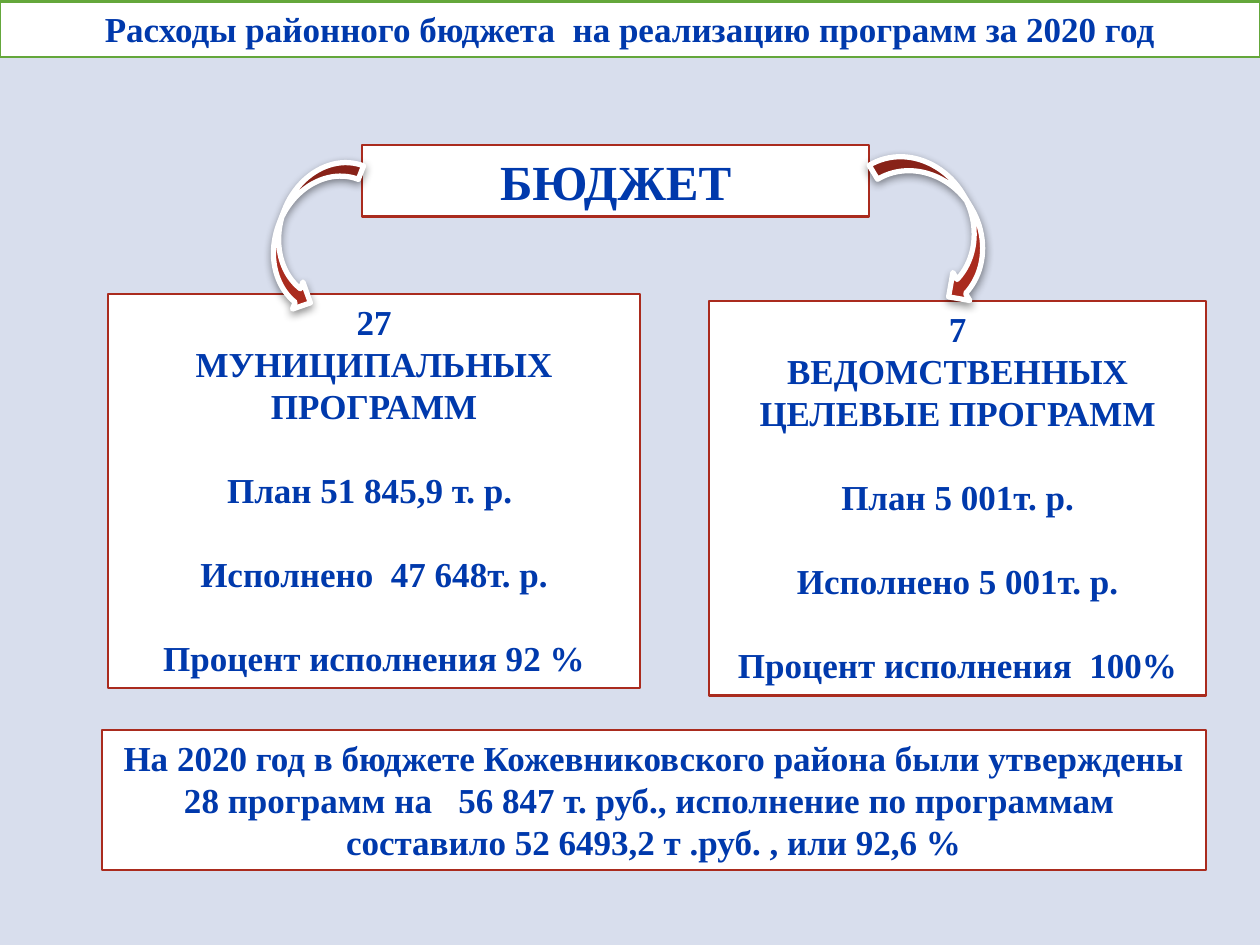
from lxml.etree import SubElement
from pptx import Presentation
from pptx.dml.color import RGBColor
from pptx.enum.shapes import MSO_SHAPE
from pptx.enum.text import MSO_ANCHOR, PP_ALIGN
from pptx.oxml.ns import qn
from pptx.util import Pt

RED, WHITE, BLUE, GREEN = "AA2B1E", "FFFFFF", "0039AC", "64A73B"


def paint(shape, fill, line, width):
    shape.fill.solid()
    shape.fill.fore_color.rgb = RGBColor.from_string(fill)
    shape.line.color.rgb = RGBColor.from_string(line)
    shape.line.width = Pt(width)


def write(shape, paragraphs, size=20, gap=0, gap_from=2):
    """Write centred paragraphs; those from gap_from on get space before."""
    frame = shape.text_frame
    frame.word_wrap = True
    frame.vertical_anchor = MSO_ANCHOR.TOP
    frame.margin_left = frame.margin_right = Pt(7.2)
    frame.margin_top = frame.margin_bottom = Pt(3.6)
    for index, text in enumerate(paragraphs):
        paragraph = frame.add_paragraph() if index else frame.paragraphs[0]
        paragraph.text = text
        paragraph.alignment = PP_ALIGN.CENTER
        paragraph.line_spacing = Pt(size * 1.2)
        paragraph.space_before = Pt(gap if index >= gap_from else 0)
        paragraph.font.name = "Times New Roman"
        paragraph.font.size = Pt(size)
        paragraph.font.bold = True
        paragraph.font.color.rgb = RGBColor.from_string(BLUE)


presentation = Presentation()
presentation.slide_width, presentation.slide_height = Pt(720), Pt(540)
slide = presentation.slides.add_slide(presentation.slide_layouts[5])
slide.background.fill.solid()
slide.background.fill.fore_color.rgb = RGBColor.from_string("D8DEED")

# Title bar
title = slide.shapes.title
title.left, title.top, title.width, title.height = Pt(0), Pt(0.9), Pt(720), Pt(31.5)
paint(title, WHITE, GREEN, 1.25)
write(title, ["Расходы районного бюджета  на реализацию программ за 2020 год"])

# Budget, the two kinds of programmes and the summary
boxes = [
    (207, 82.8, 289.5, 41, 28, ["БЮДЖЕТ"]),
    (405.2, 172, 284, 225.5, 20, [
        "7", "ВЕДОМСТВЕННЫХ ЦЕЛЕВЫЕ ПРОГРАММ", "План 5 001т. р.",
        "Исполнено 5 001т. р.", "Процент исполнения  100%"]),
    (61.8, 168, 304, 225.2, 20, [
        "27", "МУНИЦИПАЛЬНЫХ ПРОГРАММ", "План 51 845,9 т. р. ",
        "Исполнено  47 648т. р.", "Процент исполнения 92 %"]),
    (58.2, 417.3, 630.8, 79.8, 20, [
        "На 2020 год в бюджете Кожевниковского района были утверждены "
        "28 программ на   56 847 т. руб., исполнение по программам  "
        "составило 52 6493,2 т .руб. , или 92,6 %"]),
]
for left, top, width, height, size, paragraphs in boxes:
    box = slide.shapes.add_shape(
        MSO_SHAPE.RECTANGLE, Pt(left), Pt(top), Pt(width), Pt(height))
    box.shadow.inherit = False
    paint(box, WHITE, RED, 1.25)
    write(box, paragraphs, size=size, gap=24)

# Curved arrows from the budget to the programmes, with a soft shadow
arrows = [
    (MSO_SHAPE.CURVED_LEFT_ARROW, 519.1, 77.8, 37.4, 97.2, 328.9),
    (MSO_SHAPE.CURVED_RIGHT_ARROW, 159.1, 85.7, 33.1, 92.2, 21.2),
]
for kind, left, top, width, height, rotation in arrows:
    arrow = slide.shapes.add_shape(kind, Pt(left), Pt(top), Pt(width), Pt(height))
    arrow.rotation = rotation
    arrow.shadow.inherit = False
    paint(arrow, RED, WHITE, 3)
    effects = arrow.element.spPr.find(qn("a:effectLst"))
    shadow = SubElement(effects, qn("a:outerShdw"), blurRad=str(Pt(5)),
                        dist=str(Pt(2)), dir="5400000", rotWithShape="0")
    color = SubElement(shadow, qn("a:srgbClr"), val="000000")
    SubElement(color, qn("a:alpha"), val="43000")

presentation.save("out.pptx")
